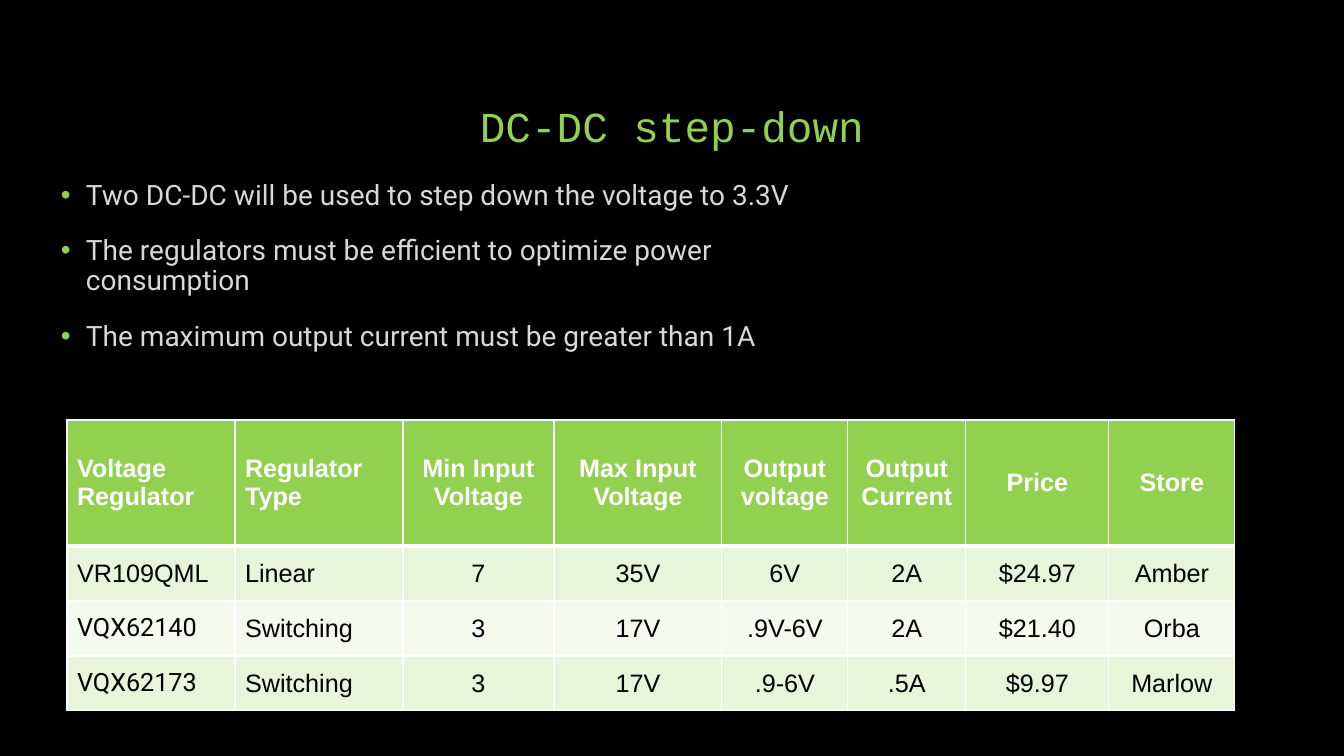
from dataclasses import dataclass

from lxml import etree
from pptx import Presentation
from pptx.dml.color import RGBColor
from pptx.enum.text import MSO_ANCHOR, MSO_AUTO_SIZE, PP_ALIGN
from pptx.oxml.ns import qn
from pptx.util import Emu, Pt

LEFT, CENTER = PP_ALIGN.LEFT, PP_ALIGN.CENTER
TOP, MIDDLE, BOTTOM = MSO_ANCHOR.TOP, MSO_ANCHOR.MIDDLE, MSO_ANCHOR.BOTTOM
NO_AUTOFIT = MSO_AUTO_SIZE.NONE
TITLE_ONLY = 5
SLIDE_WIDTH, SLIDE_HEIGHT = 1344, 756
EMU_PER_PX = 12192000 / SLIDE_WIDTH


@dataclass(frozen=True)
class Theme:
    background: str = "000000"
    accent: str = "92D050"
    body_text: str = "D8D8D8"
    header_text: str = "FFFFFF"
    cell_text: str = "000000"
    border: str = "FFFFFF"
    bands: tuple = ("E8F5DB", "F5FAEF")
    title_font: str = "Courier New"
    body_font: str = "Roboto"
    table_font: str = "Arial"
    title_size: float = 30.5
    body_size: int = 20
    table_size: int = 18
    line_spacing: float = 0.9


def px(length):
    return Emu(round(length * EMU_PER_PX))


class SlideBuilder:
    def __init__(self, deck, theme):
        self.theme = theme
        self.page = deck.slides.add_slide(deck.slide_layouts[TITLE_ONLY])
        fill = self.page.background.fill
        fill.solid()
        fill.fore_color.rgb = RGBColor.from_string(theme.background)

    def add_span(self, para, text, font, size, color, bold=False):
        span = para.add_run()
        span.text = text
        span.font.name = font
        span.font.size = Pt(size)
        span.font.bold = bold
        span.font.color.rgb = RGBColor.from_string(color)

    def set_frame(self, frame, anchor):
        frame.word_wrap = True
        frame.auto_size = NO_AUTOFIT
        frame.vertical_anchor = anchor
        frame.margin_left = frame.margin_right = px(10)
        frame.margin_top = frame.margin_bottom = px(5)

    def title(self, text, left, top, width, height, space_below):
        box = self.page.shapes.title
        box.left, box.top, box.width, box.height = map(px, (left, top, width, height))
        self.set_frame(box.text_frame, BOTTOM)
        box.text_frame.margin_bottom = px(space_below)
        para = box.text_frame.paragraphs[0]
        para.alignment = CENTER
        para.line_spacing = self.theme.line_spacing
        self.add_span(para, text, self.theme.title_font, self.theme.title_size, self.theme.accent)

    def bullets(self, items, left, top, width, height, gap):
        box = self.page.shapes.add_textbox(*map(px, (left, top, width, height)))
        frame = box.text_frame
        self.set_frame(frame, TOP)
        for index, text in enumerate(items):
            para = frame.add_paragraph() if index else frame.paragraphs[0]
            para.alignment = LEFT
            para.line_spacing = self.theme.line_spacing
            para.space_before = Pt(gap if index else 0)
            self.add_bullet(para, indent=25)
            self.add_span(para, text, self.theme.body_font, self.theme.body_size, self.theme.body_text)

    def add_bullet(self, para, indent):
        props = para._p.get_or_add_pPr()
        props.set("marL", str(px(indent)))
        props.set("indent", str(-px(indent)))
        color = etree.SubElement(props, qn("a:buClr"))
        etree.SubElement(color, qn("a:srgbClr"), val=self.theme.accent)
        etree.SubElement(props, qn("a:buFont"), typeface="Arial")
        etree.SubElement(props, qn("a:buChar"), char="•")

    def table(self, rows, left, top, widths, heights, centered_from):
        frame = self.page.shapes.add_table(
            len(rows), len(widths), *map(px, (left, top, sum(widths), sum(heights))))
        table = frame.table
        for column, width in zip(table.columns, widths):
            column.width = px(width)
        for row, height in zip(table.rows, heights):
            row.height = px(height)
        for r, values in enumerate(rows):
            for c, text in enumerate(values):
                # Part numbers below the first body row use the body font
                font = self.theme.body_font if c == 0 and r > 1 else self.theme.table_font
                align = CENTER if c >= centered_from else LEFT
                self.fill_cell(table.cell(r, c), text, r, font, align)

    def fill_cell(self, cell, text, row, font, align):
        theme = self.theme
        header = row == 0
        # Borders come before the fill in the cell properties
        heavy_side = {0: "B", 1: "T"}.get(row)
        for side in "LRTB":
            self.add_border(cell, side, 3 if side == heavy_side else 1)
        cell.fill.solid()
        color = theme.accent if header else theme.bands[(row - 1) % 2]
        cell.fill.fore_color.rgb = RGBColor.from_string(color)
        cell.vertical_anchor = MIDDLE
        para = cell.text_frame.paragraphs[0]
        para.alignment = align
        text_color = theme.header_text if header else theme.cell_text
        self.add_span(para, text, font, theme.table_size, text_color, bold=header)

    def add_border(self, cell, side, points):
        props = cell._tc.get_or_add_tcPr()
        line = etree.SubElement(props, qn(f"a:ln{side}"), w=str(Pt(points)))
        fill = etree.SubElement(line, qn("a:solidFill"))
        etree.SubElement(fill, qn("a:srgbClr"), val=self.theme.border)


def main():
    deck = Presentation()
    deck.slide_width, deck.slide_height = px(SLIDE_WIDTH), px(SLIDE_HEIGHT)
    slide = SlideBuilder(deck, Theme())

    # Title
    slide.title("DC-DC step-down", 168, 50, 1008, 126, space_below=24)

    # Regulator comparison
    slide.table(
        [
            ("Voltage Regulator", "Regulator Type", "Min Input Voltage", "Max Input Voltage",
             "Output voltage", "Output Current", "Price", "Store"),
            ("VR109QML", "Linear", "7", "35V", "6V", "2A", "$24.97", "Amber"),
            ("VQX62140", "Switching", "3", "17V", ".9V-6V", "2A", "$21.40", "Orba"),
            ("VQX62173", "Switching", "3", "17V", ".9-6V", ".5A", "$9.97", "Marlow"),
        ],
        left=67, top=420,
        widths=(168, 168, 151, 168, 126, 118, 143, 126),
        heights=(126, 55, 55, 55),
        centered_from=2,
    )

    # Requirements
    slide.bullets(
        [
            "Two DC-DC will be used to step down the voltage to 3.3V",
            "The regulators must be efficient to optimize power consumption",
            "The maximum output current must be greater than 1A",
        ],
        51, 176, 773, 471, gap=18,
    )

    deck.save("out.pptx")


if __name__ == "__main__":
    main()
